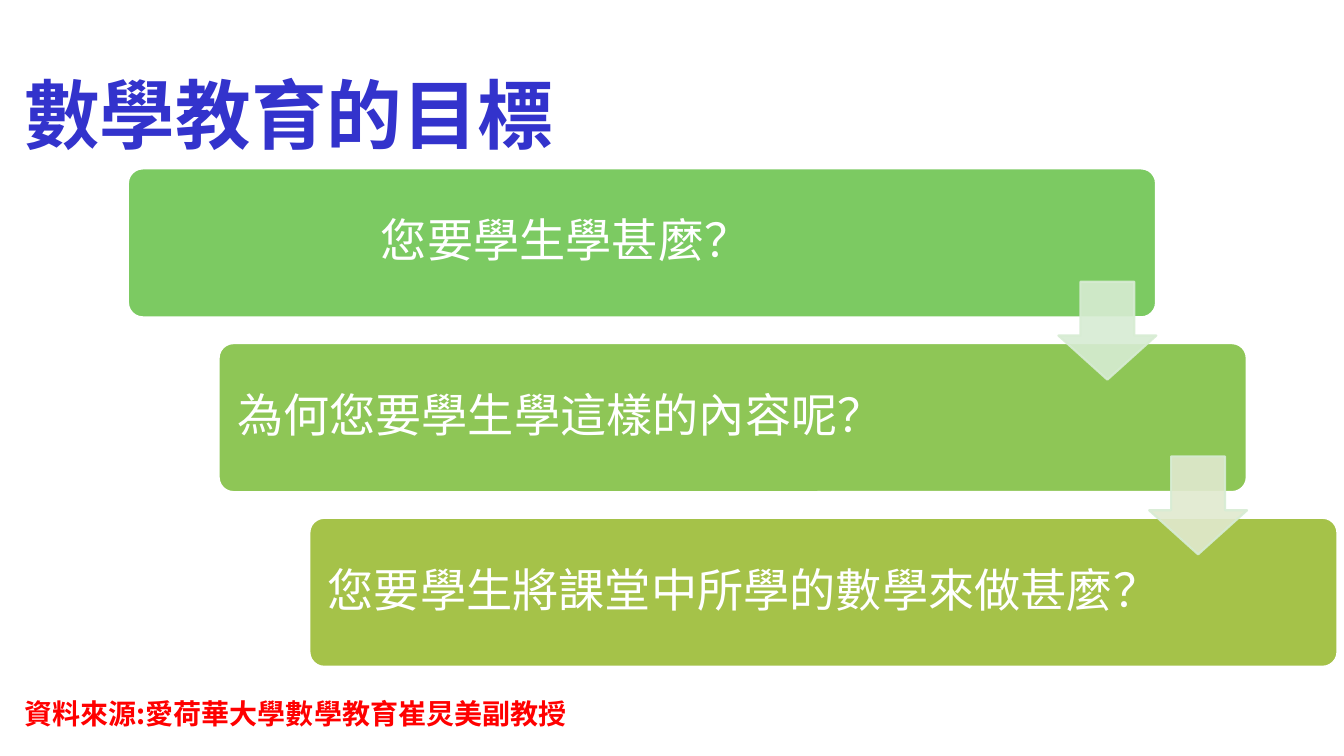
from lxml import etree
from pptx import Presentation
from pptx.dml.color import RGBColor
from pptx.enum import shapes, text
from pptx.oxml import ns
from pptx.util import Pt

# Content
FONT = "Noto Sans CJK SC"
TITLE = "數學教育的目標"
SOURCE = "資料來源:愛荷華大學數學教育崔炅美副教授"
LEFT, MID, RIGHT = text.PP_ALIGN.LEFT, text.PP_ALIGN.CENTER, text.PP_ALIGN.RIGHT
STEPS = [  # question, fill, text width, alignment
    ("您要學生學甚麼？", "7CCA62", 619.2, MID),
    ("為何您要學生學這樣的內容呢？", "8EC656", 594, LEFT),
    ("您要學生將課堂中所學的數學來做甚麼？", "A5C249", 594, LEFT),
]
ARROWS = ["D7ECD3", "E1E9CF"]
EDGE = "D7ECD3"

# Layout in points
BOX = (91.4, 120.3, 734.4, 106.4)
ARROW = (756, 201.2, 70, 70)
STEP_X, STEP_Y = 64.8, 124.8
PAD = 3.1

deck = Presentation()
deck.slide_width, deck.slide_height = Pt(960), Pt(540)
slide = deck.slides.add_slide(deck.slide_layouts[6])


def rgb(code):
    return RGBColor.from_string(code)


def fade(part, share):
    """Set the opacity of every colour inside a fill or line element."""
    for clr in part.iter(ns.qn("a:srgbClr")):
        etree.SubElement(clr, ns.qn("a:alpha")).set("val", str(share * 1000))


def add_shape(kind, at, adj, fill, line):
    shape = slide.shapes.add_shape(kind, *map(Pt, at))
    shape.shadow.inherit = False
    for i, val in enumerate(adj):
        shape.adjustments[i] = val
    shape.fill.solid()
    shape.fill.fore_color.rgb = rgb(fill)
    shape.line.color.rgb = rgb(line)
    shape.line.width = Pt(1.54)
    return shape


def add_text(words, at, size, color, align, bold=False, inset=None, space=None,
             anchor=text.MSO_ANCHOR.MIDDLE):
    frame = slide.shapes.add_textbox(*map(Pt, at)).text_frame
    frame.word_wrap = True
    frame.vertical_anchor = anchor
    if inset is not None:
        frame.margin_left = frame.margin_right = Pt(inset)
        frame.margin_top = frame.margin_bottom = Pt(inset)
    para = frame.paragraphs[0]
    para.alignment = align
    para.line_spacing = space
    run = para.add_run()
    run.text = words
    font = run.font
    font.name, font.size, font.bold = FONT, Pt(size), bold
    font.color.rgb = rgb(color)
    asian = etree.SubElement(run._r.get_or_add_rPr(), ns.qn("a:ea"))
    asian.set("typeface", FONT)
    return frame


# Title
add_text(TITLE, (0, 28.8, 412.6, 104.4), 54, "3333CC", MID, bold=True)

# Staircase of questions
x, y, wide, high = BOX
for i, (words, fill, span, align) in enumerate(STEPS):
    left, top = x + i * STEP_X, y + i * STEP_Y
    add_shape(shapes.MSO_SHAPE.ROUNDED_RECTANGLE, (left, top, wide, high),
              [0.1], fill, "FFFFFF")
    add_text(words, (left + PAD, top + PAD, span, high - 2 * PAD), 33,
             "FFFFFF", align, inset=10, space=0.9)

# Arrows between the steps
x, y, wide, high = ARROW
for i, fill in enumerate(ARROWS):
    at = (x + i * STEP_X, y + i * STEP_Y, wide, high)
    arrow = add_shape(shapes.MSO_SHAPE.DOWN_ARROW, at, [0.45, 0.55], fill, EDGE)
    arrow.adjustments[0], arrow.adjustments[1] = 0.55, 0.45
    fade(arrow._element.spPr, 90)

# Source line
note = add_text(SOURCE, (-139.7, 493.9, 551.5, 31.7), 20, "FF0000", RIGHT,
                bold=True, anchor=text.MSO_ANCHOR.TOP)
note.auto_size = text.MSO_AUTO_SIZE.SHAPE_TO_FIT_TEXT

deck.save("out.pptx")
